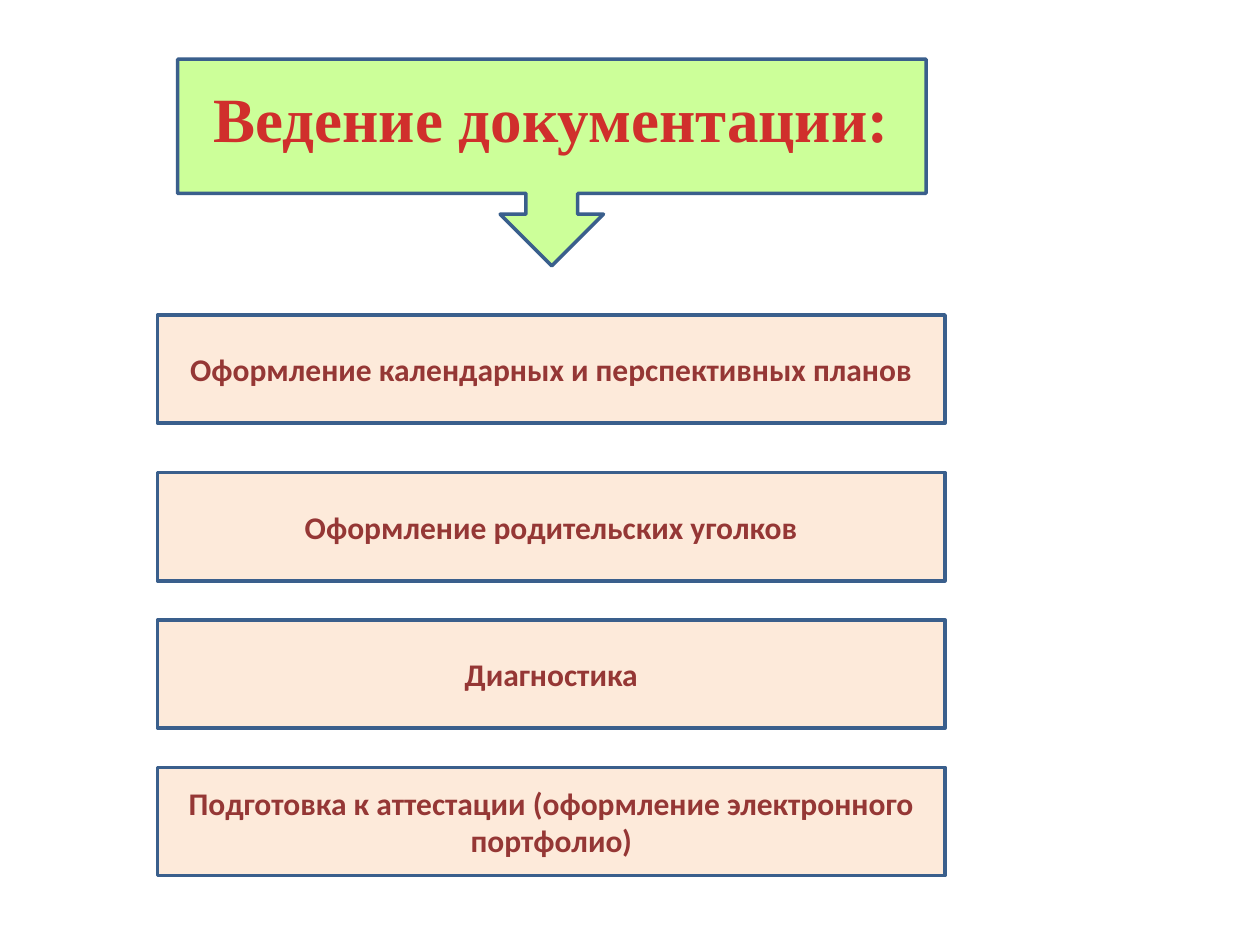
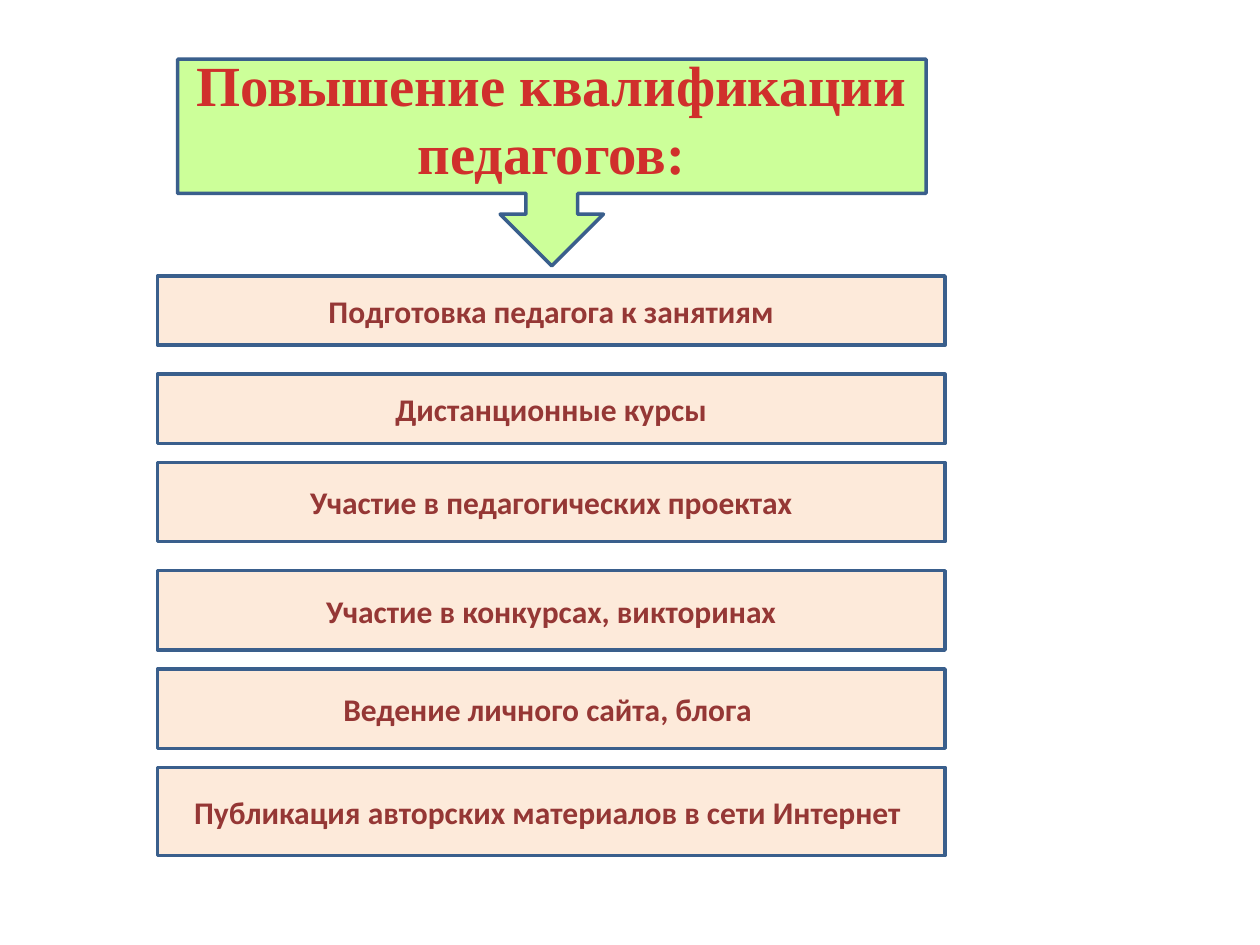
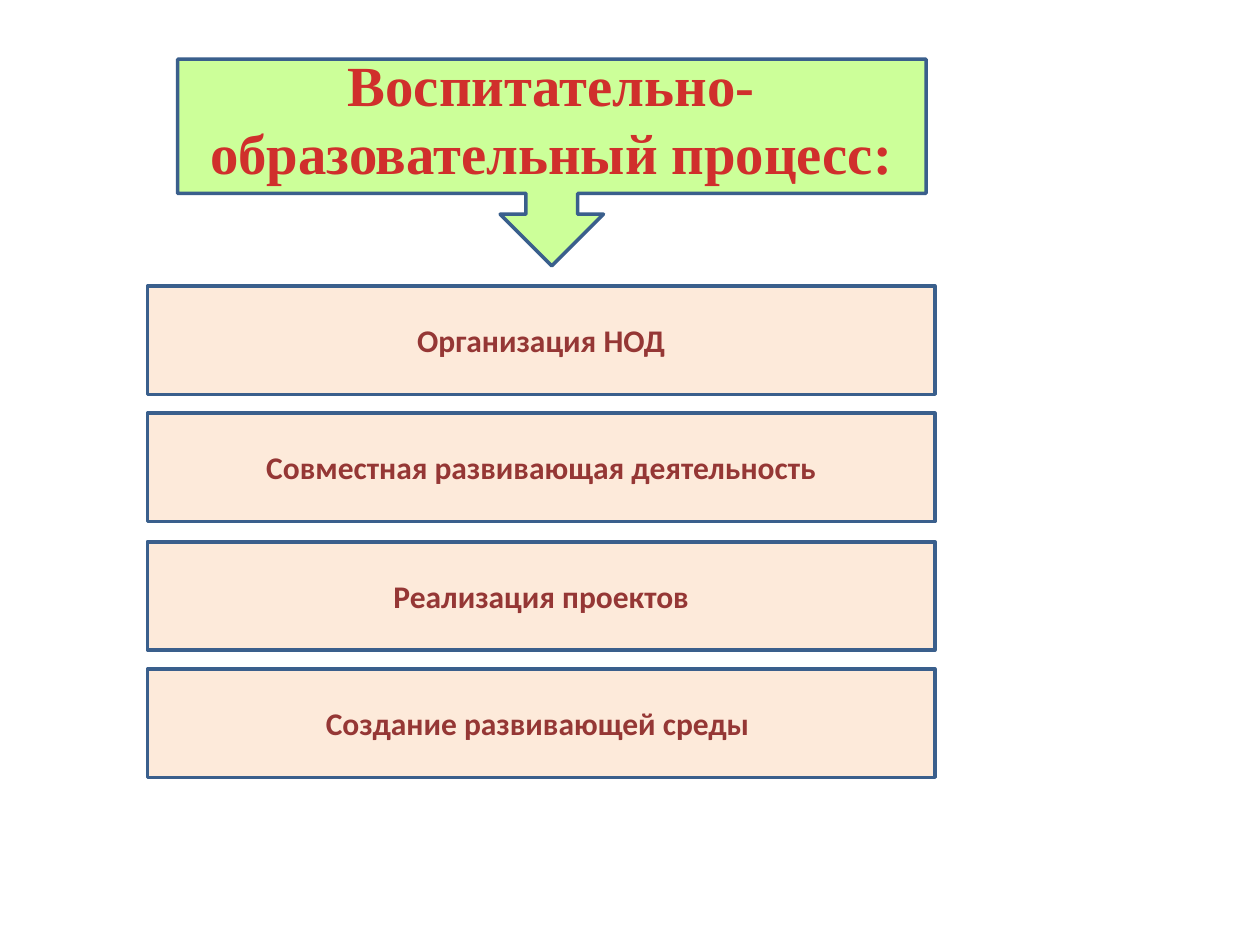
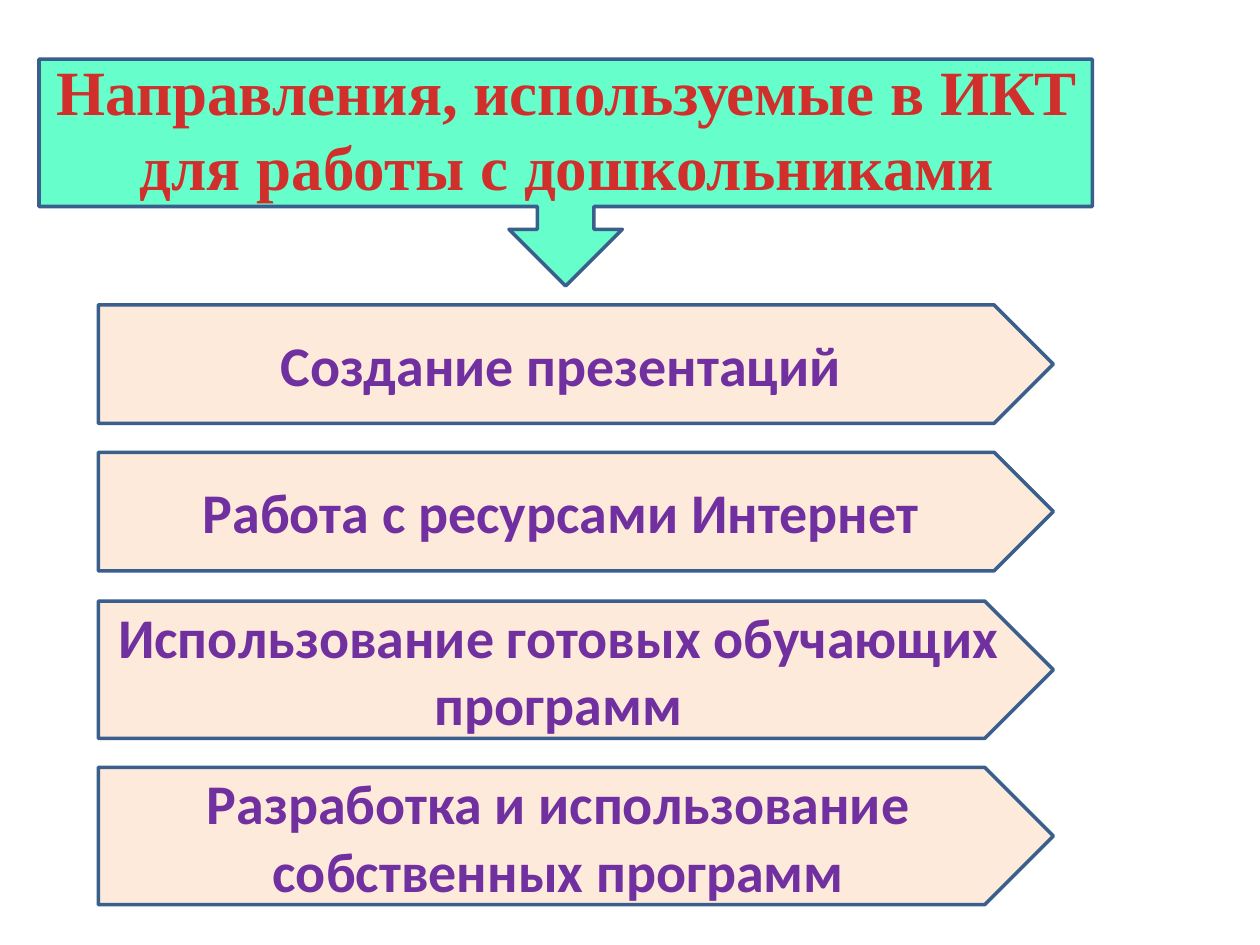
"""Build four slides on ICT in preschool work: a callout title above a column of boxes."""
from dataclasses import dataclass

from pptx import Presentation
from pptx.dml.color import RGBColor
from pptx.enum.shapes import MSO_SHAPE
from pptx.enum.text import MSO_ANCHOR, MSO_AUTO_SIZE, PP_ALIGN
from pptx.oxml import parse_xml
from pptx.oxml.ns import nsdecls
from pptx.util import Inches, Pt


@dataclass(frozen=True)
class Theme:
    green: str = "CCFF99"
    mint: str = "66FFCC"
    peach: str = "FDEADA"
    outline: str = "3A5F8C"
    brown: str = "953735"
    purple: str = "7030A0"
    title_stops: tuple = ((0, "FC7C7A"), (75, "D02F2C"), (100, "C70500"))
    title_font: str = "Times New Roman"
    body_font: str = "Calibri"
    title_size: float = 36
    title_small: float = 32.4
    body_size: float = 18
    body_large: float = 32
    line_width: float = 2


T = Theme()


def add_box(s, kind, box, fill):
    sp = s.shapes.add_shape(kind, *map(Inches, box))
    sp.shadow.inherit = False
    sp.fill.solid()
    sp.fill.fore_color.rgb = RGBColor.from_string(fill)
    sp.line.color.rgb = RGBColor.from_string(T.outline)
    sp.line.width = Pt(T.line_width)
    return sp


def add_text(sp, text, font, size):
    tf = sp.text_frame
    tf.word_wrap = True
    tf.auto_size = MSO_AUTO_SIZE.NONE
    tf.vertical_anchor = MSO_ANCHOR.MIDDLE
    p = tf.paragraphs[0]
    p.alignment = PP_ALIGN.CENTER
    r = p.add_run()
    r.text = text
    r.font.name = font
    r.font.size = Pt(size)
    r.font.bold = True
    return r


narrow = dict(callout=(1.41, 0.47, 5.94, 1.64), title_box=(1.17, 0.31, 6.41, 1.25),
              callout_fill=T.green, kind=MSO_SHAPE.RECTANGLE, left=1.25, width=6.25,
              color=T.brown, size=T.body_size, title_size=T.title_small)
wide = dict(callout=(0.31, 0.47, 8.36, 1.8), title_box=(0, 0.39, 9, 1.25),
            callout_fill=T.mint, kind=MSO_SHAPE.PENTAGON, left=0.78, width=7.58,
            color=T.purple, size=T.body_large, title_size=T.title_size)

slides = [
    ("Ведение документации:", narrow | dict(title_size=T.title_size), [
        (2.5, 0.86, "Оформление календарных и перспективных планов"),
        (3.75, 0.86, "Оформление родительских уголков"),
        (4.92, 0.86, "Диагностика"),
        (6.09, 0.86, "Подготовка к аттестации (оформление электронного портфолио)"),
    ]),
    ("Повышение квалификации педагогов:", narrow, [
        (2.19, 0.55, "Подготовка педагога к занятиям"),
        (2.97, 0.55, "Дистанционные курсы"),
        (3.67, 0.63, "Участие в педагогических проектах"),
        (4.53, 0.63, "Участие в конкурсах, викторинах"),
        (5.31, 0.63, "Ведение личного сайта, блога "),
        (6.09, 0.7, "Публикация авторских материалов в сети Интернет "),
    ]),
    ("Воспитательно- образовательный процесс:", narrow | dict(left=1.17), [
        (2.27, 0.86, "Организация НОД"),
        (3.28, 0.86, "Совместная развивающая деятельность"),
        (4.3, 0.86, "Реализация проектов"),
        (5.31, 0.86, "Создание развивающей среды "),
    ]),
    ("Направления, используемые в ИКТ для работы с дошкольниками", wide, [
        (2.42, 0.94, "Создание презентаций"),
        (3.59, 0.94, "Работа с ресурсами Интернет"),
        (4.77, 1.09, "Использование готовых обучающих программ"),
        (6.09, 1.09, "Разработка и использование собственных программ"),
    ]),
]

stops = "".join(f'<a:gs pos="{pos * 1000}"><a:srgbClr val="{color}"/></a:gs>'
                for pos, color in T.title_stops)
gradient = (f'<a:gradFill {nsdecls("a")}><a:gsLst>{stops}</a:gsLst>'
            '<a:lin ang="5400000" scaled="0"/></a:gradFill>')

prs = Presentation()
prs.slide_width, prs.slide_height = Inches(10), Inches(7.5)

for heading, style, items in slides:
    s = prs.slides.add_slide(prs.slide_layouts[5])
    title = s.shapes.title
    title.left, title.top, title.width, title.height = map(Inches, style["title_box"])
    r = add_text(title, heading, T.title_font, style["title_size"])
    r._r.get_or_add_rPr().insert(0, parse_xml(gradient))

    callout = add_box(s, MSO_SHAPE.DOWN_ARROW_CALLOUT, style["callout"], style["callout_fill"])
    title.element.addprevious(callout.element)

    for top, height, text in items:
        sp = add_box(s, style["kind"], (style["left"], top, style["width"], height), T.peach)
        r = add_text(sp, text, T.body_font, style["size"])
        r.font.color.rgb = RGBColor.from_string(style["color"])

prs.save("out.pptx")
